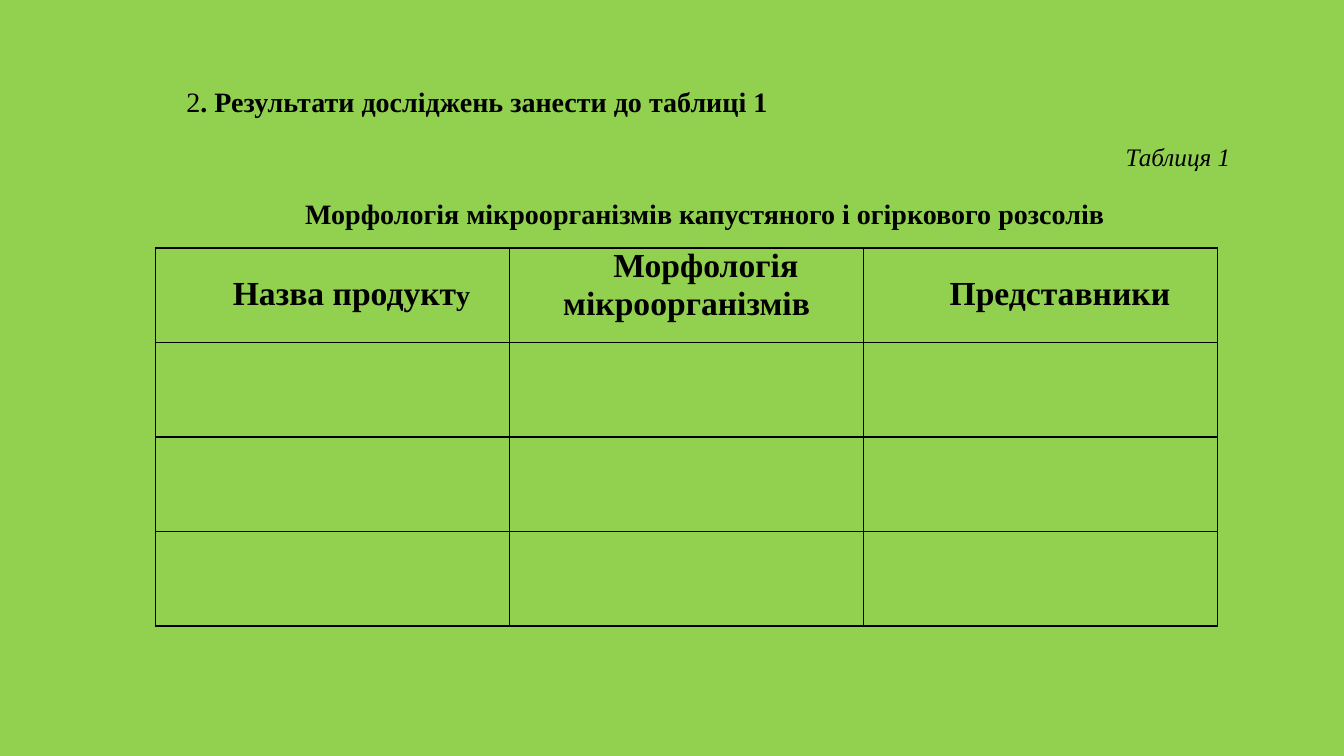
import pptx
import pptx.dml.color
import pptx.enum.text
import pptx.oxml
import pptx.oxml.ns
import pptx.util

Inches = pptx.util.Inches
ALIGN = pptx.enum.text.PP_ALIGN
FONT = "Times New Roman"
GREEN = "92D050"
BLACK = "000000"
ROWS, COLUMNS = 4, 3

# Each paragraph: alignment, line spacing, runs of (text, size, bold, italic)
INTRO = [
    (ALIGN.JUSTIFY, 1.75, [("2", 20, False, False),
                           (". Результати досліджень занести до таблиці 1", 20, True, False)]),
    (ALIGN.RIGHT, 1.75, [("Таблиця 1", 18, False, True)]),
    (ALIGN.CENTER, 1.75, [("Морфологія мікроорганізмів капустяного і огіркового розсолів ",
                           20, True, False)]),
]
HEADERS = [
    (ALIGN.CENTER, 1.75, [("Назва продукт", 24, True, False), ("у", 20, True, False)]),
    (ALIGN.CENTER, 1.0, [("Морфологія мікроорганізмів", 24, True, False)]),
    (ALIGN.CENTER, 1.75, [("Представники", 24, True, False)]),
]


def color(value):
    return pptx.dml.color.RGBColor.from_string(value)


def write_paragraph(para, content, indent):
    para.alignment, para.line_spacing, spans = content
    properties = para._p.get_or_add_pPr()
    properties.set("marL", "0")
    properties.set("indent", str(Inches(indent)))
    for text, size, bold, italic in spans:
        span = para.add_run()
        span.text = text
        span.font.name = FONT
        span.font.size = pptx.util.Pt(size)
        span.font.bold = bold
        span.font.italic = italic
        span.font.color.rgb = color(BLACK)


def style_cell(cell):
    """Give a cell thin black borders, narrow margins and no fill."""
    cell.margin_left = cell.margin_right = Inches(0.07)
    cell.margin_top = cell.margin_bottom = 0
    properties = cell._tc.get_or_add_tcPr()
    for side in ("lnL", "lnR", "lnT", "lnB"):
        properties.append(pptx.oxml.parse_xml(
            f'<a:{side} {pptx.oxml.ns.nsdecls("a")} w="{pptx.util.Pt(1)}">'
            f'<a:solidFill><a:srgbClr val="{BLACK}"/></a:solidFill></a:{side}>'))
    cell.fill.background()


def add_intro(page, left, top, width, height):
    box = page.shapes.add_textbox(left, top, width, height)
    frame = box.text_frame
    frame.word_wrap = True
    for index, content in enumerate(INTRO):
        para = frame.add_paragraph() if index else frame.paragraphs[0]
        write_paragraph(para, content, 0.5)


def add_results_table(page, left, top, width, height):
    table = page.shapes.add_table(ROWS, COLUMNS, left, top, width, height).table
    table.first_row = table.horz_banding = False
    for cell in table.iter_cells():
        style_cell(cell)
    for column, content in enumerate(HEADERS):
        write_paragraph(table.cell(0, column).text_frame.paragraphs[0], content, 0.38)


def main():
    deck = pptx.Presentation()
    deck.slide_width, deck.slide_height = Inches(13.33), Inches(7.5)
    page = deck.slides.add_slide(deck.slide_layouts[6])
    page.background.fill.solid()
    page.background.fill.fore_color.rgb = color(GREEN)
    add_results_table(page, Inches(1.54), Inches(2.46), Inches(10.54), Inches(3.75))
    add_intro(page, Inches(1.25), Inches(0.54), Inches(11.05), Inches(1.73))
    deck.save("out.pptx")


if __name__ == "__main__":
    main()
